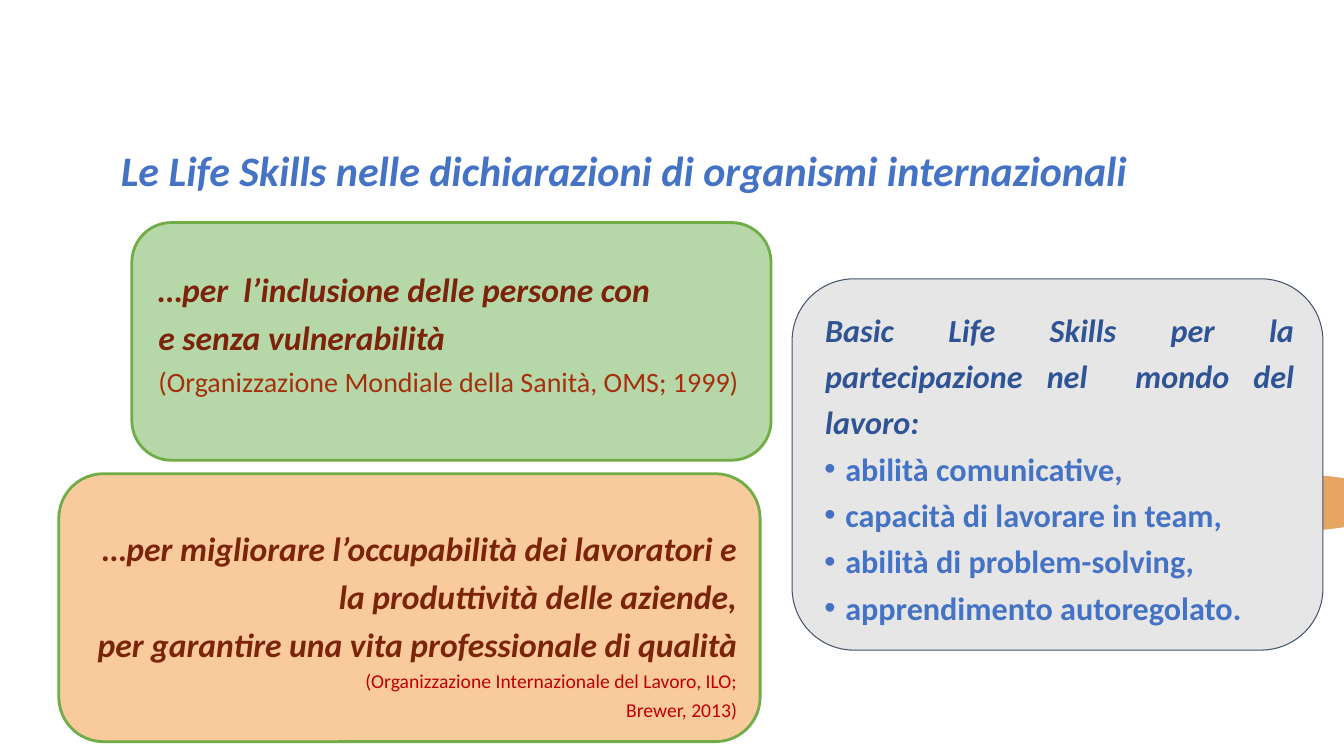
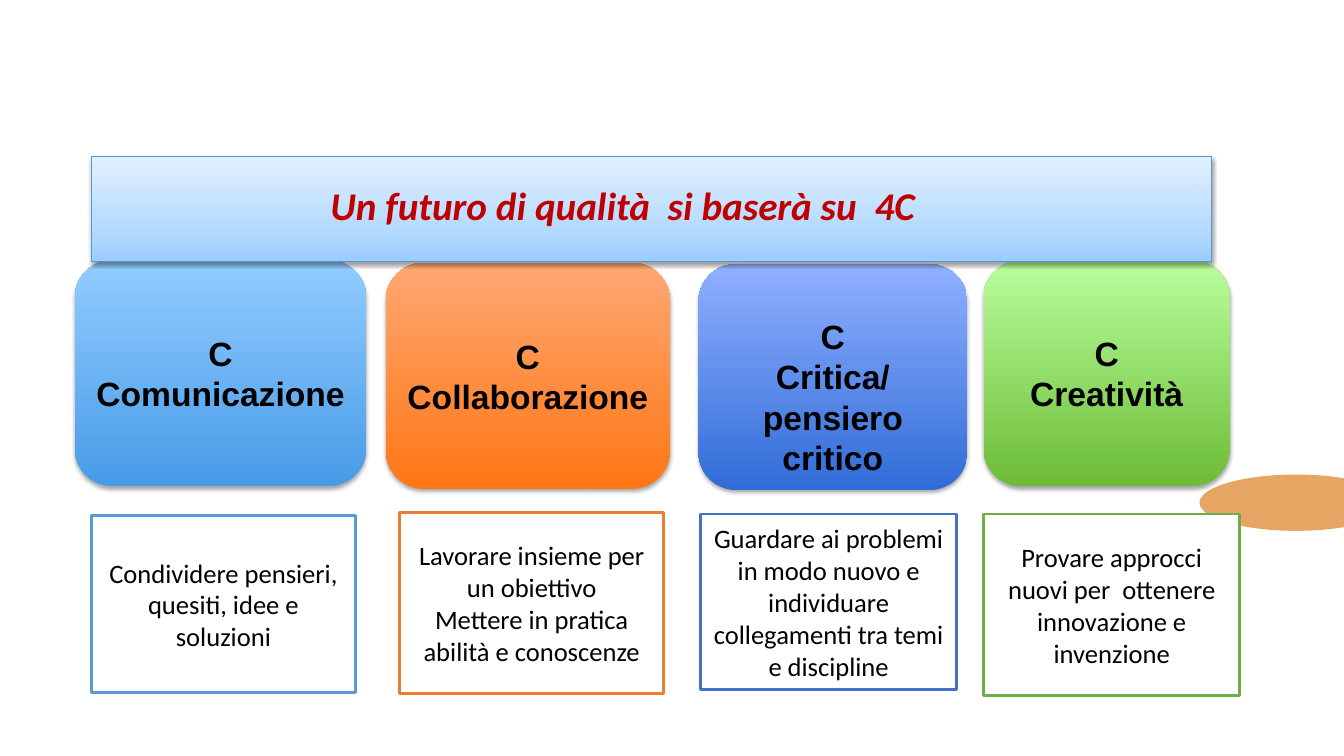
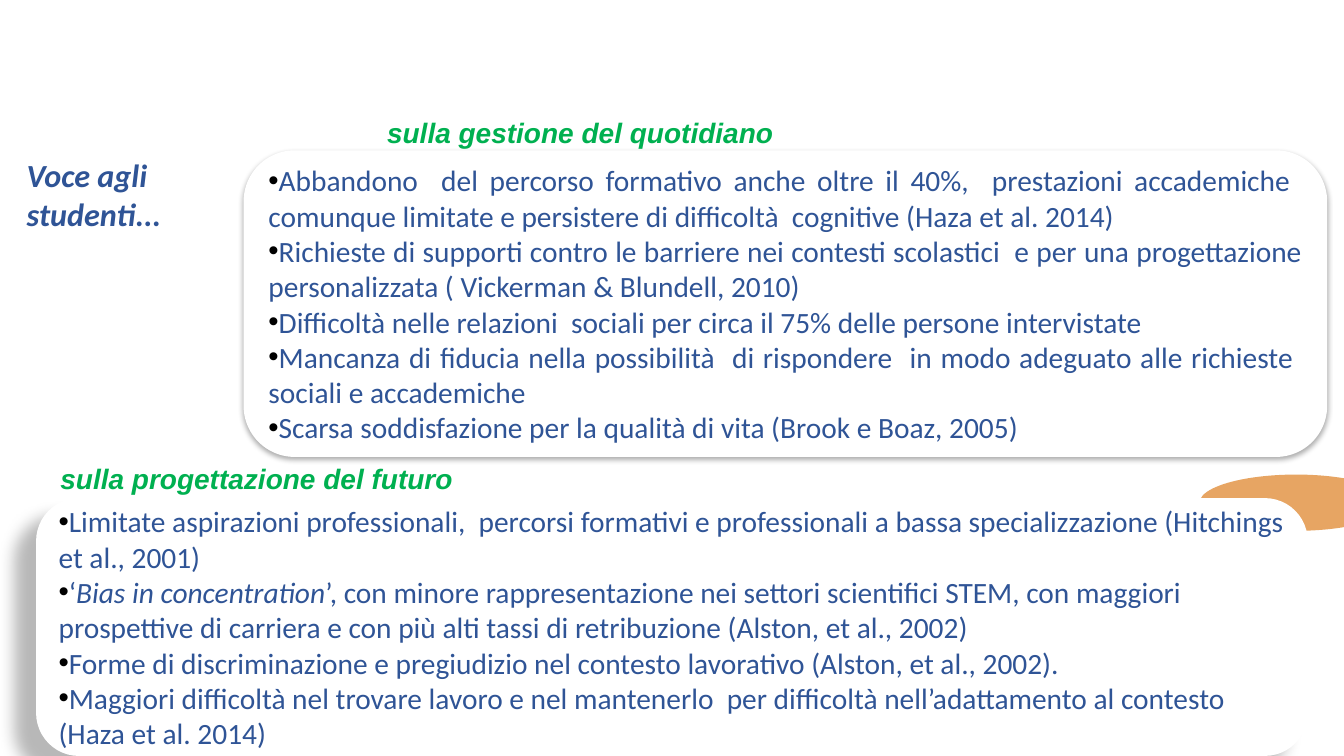
from dataclasses import dataclass
from functools import partial
from typing import NamedTuple

from lxml.etree import SubElement
from pptx import Presentation
from pptx.dml.color import RGBColor
from pptx.enum.shapes import MSO_SHAPE as Shape
from pptx.enum.text import MSO_ANCHOR as Anchor, PP_ALIGN as Align
from pptx.oxml.ns import qn
from pptx.util import Emu, Inches, Pt

COLORS = {
    "black": "000000", "white": "FFFFFF", "accent": "E7A563",
    "blue": "4472C4", "navy": "2F5496", "slate": "44546A", "sky": "5B9BD5",
    "steel": "5597D3", "green": "70AD47", "leaf": "B6D7A8", "emerald": "00B050",
    "orange": "ED7D31", "peach": "F9CB9C", "gray": "E7E6E6",
    "red": "C00000", "rust": "A5300F", "brown": "7B230B",
}
COLUMNS, ROWS = 160, 90
WIDTH, HEIGHT = Inches(40 / 3), Inches(7.5)


class Box(NamedTuple):
    col: float
    row: float
    cols: float
    rows: float


class Shadow(NamedTuple):
    opacity: int
    blur: float
    distance: float
    angle: int


class Run(NamedTuple):
    text: str
    italic: bool = False


@dataclass
class Look:
    fill: str = "white"
    line: str | None = None
    weight: float = 2
    stops: tuple[tuple[int, str], ...] = ()
    shadow: Shadow | None = None


@dataclass
class Skill:
    col: float
    cols: float
    row: float
    lines: tuple[str, ...]
    bottom: str
    top: str
    inset_top: float
    note: Box
    outline: str
    note_lines: tuple[str, ...]


CARD_SHADOW = Shadow(35, 3.1, 1.8, 90)
BANNER_SHADOW = Shadow(38, 3.1, 1.6, 90)
PANEL_SHADOW = Shadow(32, 3.5, 2.2, 90)
DEEP_SHADOW = Shadow(28, 11.8, 19.7, 141)

SKILLS = [
    Skill(8.9, 34.7, 31, ("C", "Comunicazione"), "489BE7", "91CCFF", 0.6,
          Box(10.9, 61.4, 31.4, 21.1), "sky",
          ("Condividere pensieri, quesiti, idee e soluzioni",)),
    Skill(45.95, 33.8, 31.3, ("C", "Collaborazione"), "FF7714", "FFA773", 0.6,
          Box(47.6, 61, 31.4, 21.6), "orange",
          ("Lavorare insieme per un obiettivo",
           "Mettere in pratica abilità e conoscenze")),
    Skill(83.15, 32, 31.45, ("C", "Critica/", "pensiero critico"), "306CD7", "90B0FF", 5.2,
          Box(83.4, 61.2, 30.5, 20.9), "blue",
          ("Guardare ai problemi in modo nuovo e individuare collegamenti "
           "tra temi e discipline",)),
    Skill(117.1, 29.3, 31, ("C", "Creatività"), "6DBC37", "B8FE9C", 0.6,
          Box(117.1, 61.2, 30.5, 21.6), "green",
          ("Provare approcci nuovi per  ottenere innovazione e invenzione",)),
]
ABILITIES = [
    "abilità comunicative,", "capacità di lavorare in team,",
    "abilità di problem-solving,", "apprendimento autoregolato.",
]
DAILY_LIFE = [
    "Abbandono  del percorso formativo anche oltre il 40%,  prestazioni accademiche  "
    "comunque limitate e persistere di difficoltà  cognitive (Haza et al. 2014)",
    "Richieste di supporti contro le barriere nei contesti scolastici  e per una "
    "progettazione personalizzata ( Vickerman & Blundell, 2010)",
    "Difficoltà nelle relazioni  sociali per circa il 75% delle persone intervistate",
    "Mancanza di fiducia nella possibilità  di rispondere  in modo adeguato alle "
    "richieste  sociali e accademiche",
    "Scarsa soddisfazione per la qualità di vita (Brook e Boaz, 2005)",
]
FUTURE = [
    "Limitate aspirazioni professionali,  percorsi formativi e professionali a bassa "
    "specializzazione (Hitchings et al., 2001)",
    [Run("‘"), Run("Bias in concentration", True),
     Run("’, con minore rappresentazione nei settori scientifici STEM, con maggiori "
         "prospettive di carriera e con più alti tassi di retribuzione (Alston, et al., 2002)")],
    "Forme di discriminazione e pregiudizio nel contesto lavorativo (Alston, et al., 2002).",
    "Maggiori difficoltà nel trovare lavoro e nel mantenerlo  per difficoltà "
    "nell’adattamento al contesto (Haza et al. 2014)",
]


def rgb(name: str) -> RGBColor:
    return RGBColor.from_string(COLORS[name])


def across(cols: float) -> Emu:
    return Emu(round(WIDTH * cols / COLUMNS))


def down(rows: float) -> Emu:
    return Emu(round(HEIGHT * rows / ROWS))


def place(box: Box) -> tuple[Emu, Emu, Emu, Emu]:
    return across(box.col), down(box.row), across(box.cols), down(box.rows)


def set_frame(sp, top: float = 0.6, bottom: float = 0.6, anchor=Anchor.MIDDLE):
    tf = sp.text_frame
    tf.word_wrap = True
    tf.vertical_anchor = anchor
    tf.margin_left = tf.margin_right = across(1.2)
    tf.margin_top, tf.margin_bottom = down(top), down(bottom)
    return tf


def add_gradient(sp, stops: tuple[tuple[int, str], ...]) -> None:
    sp.fill.gradient()
    sp.fill.gradient_angle = 90
    gs_list = next(sp._element.spPr.iter(qn("a:gsLst")))
    for gs in list(gs_list):
        gs_list.remove(gs)
    for percent, color in stops:
        gs = SubElement(gs_list, qn("a:gs"), pos=str(percent * 1000))
        SubElement(gs, qn("a:srgbClr"), val=color)


def add_shadow(sp, shadow: Shadow) -> None:
    effects = sp._element.spPr.find(qn("a:effectLst"))
    outer = SubElement(effects, qn("a:outerShdw"), blurRad=str(Pt(shadow.blur)),
                       dist=str(Pt(shadow.distance)), dir=str(shadow.angle * 60000),
                       rotWithShape="0")
    color = SubElement(outer, qn("a:srgbClr"), val=COLORS["black"])
    SubElement(color, qn("a:alpha"), val=str(shadow.opacity * 1000))


def add_panel(s, kind: Shape, box: Box, look: Look, top: float = 0.6, bottom: float = 0.6):
    sp = s.shapes.add_shape(kind, *place(box))
    sp.shadow.inherit = False
    if look.stops:
        add_gradient(sp, look.stops)
    else:
        sp.fill.solid()
        sp.fill.fore_color.rgb = rgb(look.fill)
    if look.line:
        sp.line.color.rgb = rgb(look.line)
        sp.line.width = Pt(look.weight)
    else:
        sp.line.fill.background()
    if look.shadow:
        add_shadow(sp, look.shadow)
    return set_frame(sp, top, bottom)


def add_label(s, box: Box, anchor=Anchor.TOP):
    return set_frame(s.shapes.add_textbox(*place(box)), anchor=anchor)


def write(tf, text: str | list[Run], *, size: float, color: str, font: str = "Calibri",
          bold: bool = False, italic: bool = False, align=Align.LEFT, margin: float = 0,
          indent: float = 0, spacing: float = 1, bullet: str | None = None) -> None:
    p = tf.paragraphs[0]
    if p.runs:
        p = tf.add_paragraph()
    p.alignment = align
    p.line_spacing = spacing
    p_pr = p._p.get_or_add_pPr()
    p_pr.set("marL", str(across(margin)))
    p_pr.set("indent", str(across(indent)))
    if bullet:
        SubElement(SubElement(p_pr, qn("a:buClr")), qn("a:srgbClr"), val=COLORS[bullet])
        SubElement(p_pr, qn("a:buFont"), typeface="Arial")
        SubElement(p_pr, qn("a:buChar"), char="•")
    for part in [Run(text, italic)] if isinstance(text, str) else text:
        r = p.add_run()
        r.text = part.text
        r.font.name, r.font.size = font, Pt(size)
        r.font.bold, r.font.italic = bold, part.italic
        r.font.color.rgb = rgb(color)


strong = partial(write, bold=True, italic=True)
heading = partial(strong, size=20, color="emerald", font="Arial", margin=0.6)
finding = partial(write, size=21, color="navy", indent=-1.8, bullet="black")


def new_slide(prs):
    s = prs.slides.add_slide(prs.slide_layouts[6])
    add_panel(s, Shape.OVAL, Box(142.8, 56.5, 23, 6.7), Look("accent"))
    return s


def build_declarations(prs) -> None:
    s = new_slide(prs)
    tf = add_panel(s, Shape.ROUNDED_RECTANGLE, Box(7, 56.4, 83.5, 31.9),
                   Look("peach", "green"), top=3.6)
    right = {"align": Align.RIGHT, "margin": 0.6, "spacing": 1.2}
    for text in ("…per migliorare l’occupabilità dei lavoratori e la produttività delle aziende,",
                 "per garantire una vita professionale di qualità"):
        strong(tf, text, size=24, color="brown", **right)
    for text in ("(Organizzazione Internazionale del Lavoro, ILO;", "Brewer, 2013)"):
        write(tf, text, size=14, color="red", **right)

    tf = add_panel(s, Shape.ROUNDED_RECTANGLE, Box(15.7, 26.5, 76.1, 28.3),
                   Look("leaf", "green"), bottom=3.5)
    for text in ("…per\u00a0 l’inclusione delle persone con", "e senza vulnerabilità"):
        strong(tf, text, size=24, color="brown", margin=0.6, spacing=1.2)
    write(tf, "(Organizzazione Mondiale della Sanità, OMS; 1999)",
          size=20, color="rust", margin=0.6, spacing=1.2)

    tf = add_label(s, Box(13.2, 16.3, 129.6, 8.6), Anchor.MIDDLE)
    strong(tf, "Le Life Skills nelle dichiarazioni di organismi internazionali",
           size=30, color="blue", spacing=0.9)

    tf = add_panel(s, Shape.FLOWCHART_ALTERNATE_PROCESS, Box(94.3, 33.2, 63.2, 44.2),
                   Look("gray", "slate", 0.75), top=1.2, bottom=1.2)
    strong(tf, "Basic Life Skills per la partecipazione nel  mondo del lavoro:",
           size=23, color="navy", align=Align.JUSTIFY, margin=0.6, spacing=1.2)
    for text in ABILITIES:
        write(tf, text, size=23, color="blue", bold=True, align=Align.JUSTIFY,
              margin=3, indent=-2.5, spacing=1.2, bullet="blue")


def build_four_skills(prs) -> None:
    s = new_slide(prs)
    for skill in SKILLS:
        look = Look(stops=((0, skill.bottom), (100, skill.top)), shadow=CARD_SHADOW)
        tf = add_panel(s, Shape.ROUNDED_RECTANGLE, Box(skill.col, skill.row, skill.cols, 26.9),
                       look, top=skill.inset_top)
        for text in skill.lines:
            write(tf, text, size=24, color="black", font="Arial", bold=True, align=Align.CENTER)
        tf = add_panel(s, Shape.RECTANGLE, skill.note, Look(line=skill.outline))
        for text in skill.note_lines:
            write(tf, text, size=19, color="black", align=Align.CENTER)
    stops = ((0, "9BCDFF"), (35, "B8DCFF"), (100, "E2F0FF"))
    add_panel(s, Shape.RECTANGLE, Box(10.9, 18.6, 133.3, 12.5),
              Look(line="steel", weight=0.75, stops=stops, shadow=BANNER_SHADOW))
    tf = add_label(s, Box(38.15, 21, 79.8, 7.8))
    strong(tf, "Un futuro di qualità  si baserà su  4C", size=28, color="red")


def build_student_voices(prs) -> None:
    s = new_slide(prs)
    tf = add_label(s, Box(2, 17.9, 27, 22))
    strong(tf, "Voce agli studenti...", size=23, color="navy")
    heading(add_label(s, Box(5.4, 54.4, 64.7, 4.9)), "sulla progettazione del futuro")
    heading(add_label(s, Box(44.3, 13.6, 114, 4.3)), "sulla gestione del quotidiano", spacing=0.9)
    for box, shadow, align, findings in (
        (Box(29, 17.9, 129, 36.5), PANEL_SHADOW, Align.JUSTIFY, DAILY_LIFE),
        (Box(4.3, 59.3, 151.4, 30.7), DEEP_SHADOW, Align.LEFT, FUTURE),
    ):
        tf = add_panel(s, Shape.ROUNDED_RECTANGLE, box, Look(shadow=shadow))
        for text in findings:
            finding(tf, text, align=align)


def main() -> None:
    prs = Presentation()
    prs.slide_width, prs.slide_height = WIDTH, HEIGHT
    build_declarations(prs)
    build_four_skills(prs)
    build_student_voices(prs)
    prs.save("out.pptx")


if __name__ == "__main__":
    main()
